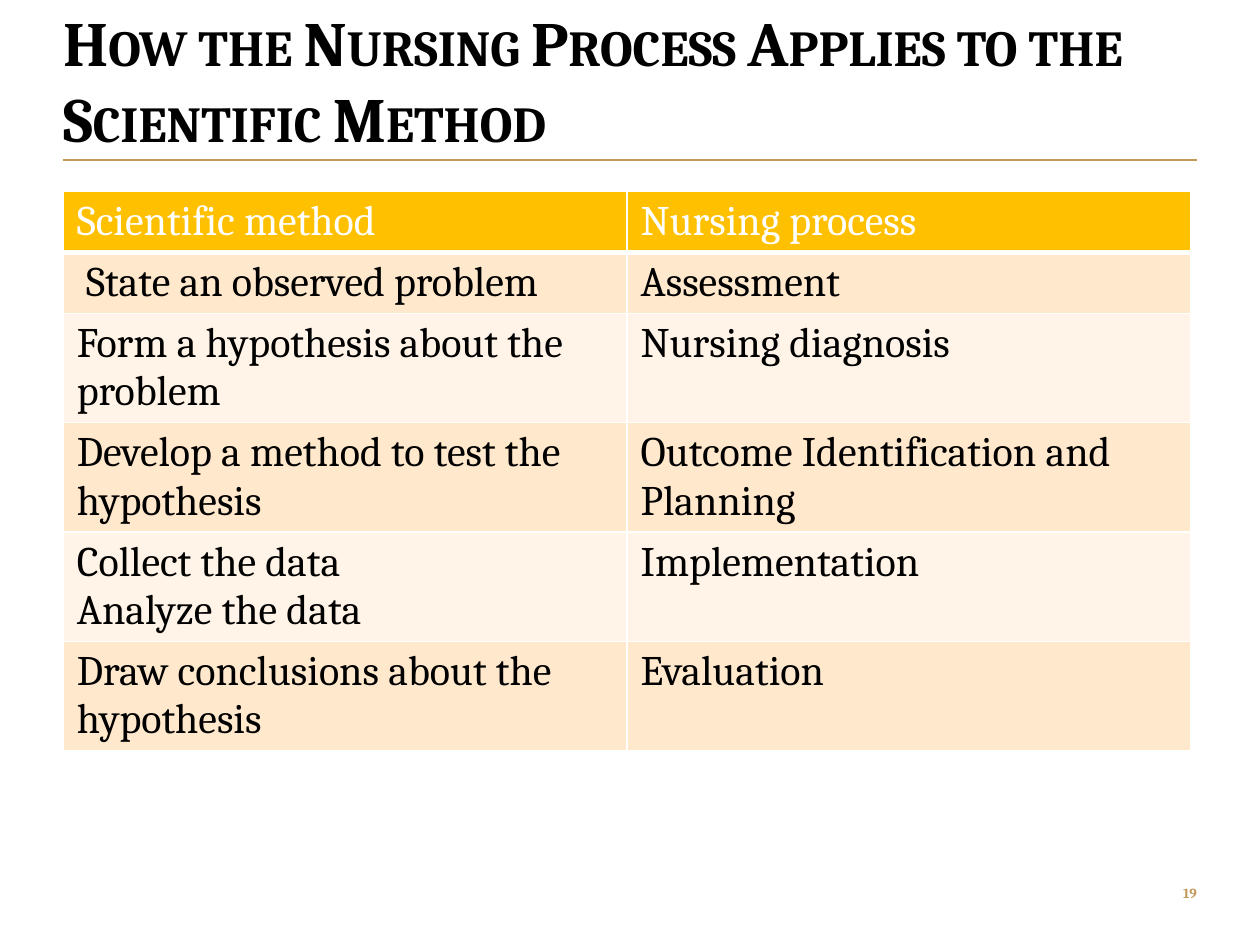
from dataclasses import dataclass

from lxml import etree
from pptx import Presentation
from pptx import util as u
from pptx.dml.color import RGBColor
from pptx.enum import shapes, text
from pptx.oxml.ns import qn


@dataclass(frozen=True)
class Theme:
    font: str = "Cambria"
    ink: str = "000000"
    paper: str = "FFFFFF"
    accent: str = "C19859"
    header: str = "FFC000"
    bands: tuple = ("FFE8CC", "FFF4E7")
    title_size: int = 36
    table_size: int = 24
    number_size: int = 8


theme = Theme()
STEPS = [
    ("Scientific method", "Nursing process"),
    (" State an observed problem", "Assessment"),
    ("Form a hypothesis about the problem", "Nursing diagnosis"),
    ("Develop a method to test the hypothesis", "Outcome Identification and Planning"),
    ("Collect the data\nAnalyze the data", "Implementation"),
    ("Draw conclusions about the hypothesis", "Evaluation"),
]


def style(paragraph, size, color, bold=False):
    font = paragraph.font
    font.name, font.size, font.bold = theme.font, u.Pt(size), bold
    font.color.rgb = RGBColor.from_string(color)


def add_border(cell, side, width):
    """Draw one cell edge; call in the order L, R, T, B before filling."""
    edge = etree.SubElement(cell._tc.get_or_add_tcPr(), qn(f"a:ln{side}"), w=str(u.Pt(width)))
    fill = etree.SubElement(edge, qn("a:solidFill"))
    etree.SubElement(fill, qn("a:srgbClr"), val=theme.paper)


deck = Presentation()
deck.slide_width, deck.slide_height = u.Inches(10), u.Inches(7.5)
slide = deck.slides.add_slide(deck.slide_layouts[5])
margin = u.Inches(0.5)
right = deck.slide_width - margin
content_width = right - margin

# Title and rule
title = slide.shapes.title
title.left, title.top, title.width, title.height = margin, 0, content_width, u.Inches(1.23)
heading = title.text_frame
heading.text = "How the Nursing Process Applies to the Scientific Method"
heading.vertical_anchor = text.MSO_ANCHOR.BOTTOM
heading.word_wrap = True
heading.auto_size = text.MSO_AUTO_SIZE.NONE
heading.margin_left = heading.margin_right = heading.margin_top = heading.margin_bottom = 0
heading.paragraphs[0].alignment = text.PP_ALIGN.LEFT
style(heading.paragraphs[0], theme.title_size, theme.ink, bold=True)
heading.paragraphs[0].runs[0]._r.get_or_add_rPr().set("cap", "small")

rule_y = u.Inches(1.27)
rule = slide.shapes.add_connector(shapes.MSO_CONNECTOR.STRAIGHT, margin, rule_y, right, rule_y)
rule.line.color.rgb = RGBColor.from_string(theme.accent)
rule.line.width = u.Pt(0.75)
etree.SubElement(rule._element.spPr, qn("a:effectLst"))

# Comparison table: rows grow to fit their text
table_frame = slide.shapes.add_table(
    len(STEPS), 2, margin, u.Inches(1.52), u.Inches(8.95), u.Inches(4.6))
comparison = table_frame.table
for row in comparison.rows:
    row.height = u.Inches(0.41)
table_frame.height = u.Inches(4.6)

for row_index, step in enumerate(STEPS):
    is_header = row_index == 0
    band = theme.header if is_header else theme.bands[(row_index - 1) % 2]
    for column_index, wording in enumerate(step):
        cell = comparison.cell(row_index, column_index)
        for side in "LRTB":
            add_border(cell, side, 3 if is_header and side == "B" else 1)
        cell.fill.solid()
        cell.fill.fore_color.rgb = RGBColor.from_string(band)
        cell.margin_left = cell.margin_right = u.Inches(0.11)
        cell.margin_top = cell.margin_bottom = u.Inches(0.05)
        cell.text_frame.text = wording
        for paragraph in cell.text_frame.paragraphs:
            style(paragraph, theme.table_size, theme.paper if is_header else theme.ink)

# Slide number
number_width = u.Inches(0.37)
page_number = slide.shapes.add_textbox(
    right - number_width, u.Inches(6.91), number_width, u.Inches(0.36)).text_frame
page_number.text = "19"
page_number.word_wrap = True
page_number.vertical_anchor = text.MSO_ANCHOR.MIDDLE
page_number.margin_left = page_number.margin_right = 0
page_number.margin_top = page_number.margin_bottom = 0
page_number.paragraphs[0].alignment = text.PP_ALIGN.RIGHT
style(page_number.paragraphs[0], theme.number_size, theme.accent, bold=True)

deck.save("out.pptx")
